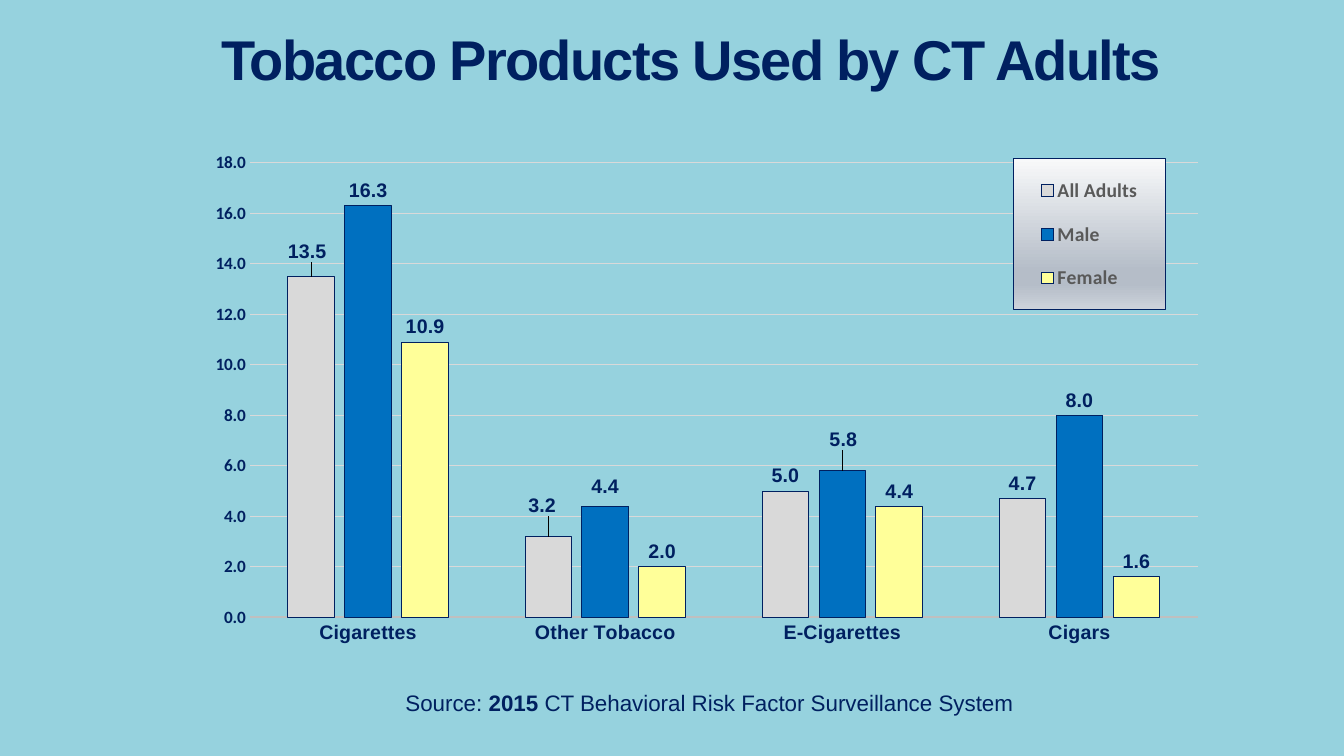
"""Build a slide charting tobacco products used by Connecticut adults."""
from pptx import Presentation
from pptx.chart.data import CategoryChartData
from pptx.dml.color import RGBColor
from pptx.enum.chart import XL_CHART_TYPE as ChartType
from pptx.enum.chart import XL_LABEL_POSITION as LabelPosition
from pptx.enum.chart import XL_LEGEND_POSITION as LegendPosition
from pptx.enum.chart import XL_TICK_MARK as TickMark
from pptx.enum.text import MSO_ANCHOR as Anchor
from pptx.enum.text import MSO_AUTO_SIZE as AutoSize
from pptx.enum.text import PP_ALIGN as Align
from pptx.oxml import parse_xml
from pptx.oxml.ns import nsdecls, qn
from pptx.util import Cm, Pt

SKY = RGBColor(0x96, 0xD2, 0xDE)
NAVY = RGBColor(0x00, 0x20, 0x60)
BLACK = RGBColor(0x00, 0x00, 0x00)
LIGHT_GRAY = RGBColor(0xD9, 0xD9, 0xD9)
AXIS_GRAY = RGBColor(0xBF, 0xBF, 0xBF)
LEGEND_GRAY = RGBColor(0x59, 0x59, 0x59)
BLUE = RGBColor(0x00, 0x70, 0xC0)
YELLOW = RGBColor(0xFF, 0xFF, 0x99)


def style_font(font, size, color=NAVY, bold=True, name="Arial"):
    font.name, font.size, font.bold = name, Pt(size), bold
    font.color.rgb = color


def place(element, index, body):
    for old in element.findall(qn("c:layout")):
        element.remove(old)
    element.insert(index, parse_xml(
        f"<c:layout {nsdecls('c')}><c:manualLayout>{body}</c:manualLayout></c:layout>"))


presentation = Presentation()
presentation.slide_width, presentation.slide_height = Cm(33.87), Cm(19.05)
slide = presentation.slides.add_slide(presentation.slide_layouts[6])
slide.background.fill.solid()
slide.background.fill.fore_color.rgb = SKY

title = slide.shapes.add_textbox(Cm(4.65), Cm(0.58), Cm(25.55), Cm(2.01)).text_frame
title.word_wrap = True
title.vertical_anchor = Anchor.MIDDLE
title.text = "Tobacco Products Used by CT Adults"
heading = title.paragraphs[0]
heading.alignment, heading.line_spacing = Align.CENTER, 0.85
style_font(heading.runs[0].font, 40)
heading.runs[0].font._element.set("spc", "-120")

usage = CategoryChartData(number_format="0.0")
usage.categories = ["Cigarettes", "Other Tobacco", "E-Cigarettes", "Cigars"]
usage.add_series("All Adults", (13.5, 3.2, 5.0, 4.7))
usage.add_series("Male", (16.3, 4.4, 5.8, 8.0))
usage.add_series("Female", (10.9, 2.0, 4.4, 1.6))
chart = slide.shapes.add_chart(ChartType.COLUMN_CLUSTERED, Cm(5.03), Cm(3.1),
                               Cm(25.73), Cm(13.92), usage).chart
chart.has_title = False
style_font(chart.font, 10, BLACK, False, "Calibri")
plot = chart.plots[0]
plot.gap_width, plot.overlap, plot.vary_by_categories = 164, -22, False
place(chart._chartSpace.chart.plotArea, 0,
      '<c:layoutTarget val="inner"/><c:xMode val="edge"/><c:yMode val="edge"/>'
      '<c:x val="0.049"/><c:y val="0.072"/><c:w val="0.929"/><c:h val="0.823"/>')

products = chart.category_axis
products.major_tick_mark = products.minor_tick_mark = TickMark.NONE
products.format.line.color.rgb = AXIS_GRAY
products.format.line.width = Pt(1.5)
style_font(products.tick_labels.font, 14)

percent = chart.value_axis
percent.minimum_scale, percent.maximum_scale, percent.major_unit = 0, 18, 2
percent.major_tick_mark = percent.minor_tick_mark = TickMark.NONE
percent.format.line.fill.background()
percent.major_gridlines.format.line.color.rgb = LIGHT_GRAY
percent.major_gridlines.format.line.width = Pt(0.75)
percent.tick_labels.number_format = "0.0"
percent.tick_labels.number_format_is_linked = False
style_font(percent.tick_labels.font, 12.3, name="Calibri")

label_shifts = {
    "All Adults": {0: (-0.004, -0.018), 1: (-0.006, -0.029)},
    "Male": {1: (0, -0.009), 2: (0.001, -0.029)},
}
for group, color in zip(plot.series, (LIGHT_GRAY, BLUE, YELLOW)):
    group.format.fill.solid()
    group.format.fill.fore_color.rgb = color
    group.format.line.color.rgb = NAVY
    group.format.line.width = Pt(0.75)
    labels = group.data_labels
    labels.show_value = True
    labels.position = LabelPosition.OUTSIDE_END
    labels.number_format, labels.number_format_is_linked = "0.0", False
    style_font(labels.font, 14)
    for index, (dx, dy) in label_shifts.get(group.name, {}).items():
        label = group.points[index].data_label
        style_font(label.font, 14)
        label.position = LabelPosition.OUTSIDE_END
        label_xml = labels._element.find(f"{qn('c:dLbl')}[{qn('c:idx')}][@val]")
        for label_xml in labels._element.findall(qn("c:dLbl")):
            if label_xml.find(qn("c:idx")).get("val") == str(index):
                place(label_xml, 1, f'<c:x val="{dx}"/><c:y val="{dy}"/>')
                label_xml.insert(2, parse_xml(
                    f'<c:numFmt {nsdecls("c")} formatCode="0.0" sourceLinked="0"/>'))

chart.has_legend = True
legend = chart.legend
legend.position, legend.include_in_layout = LegendPosition.TOP, False
style_font(legend.font, 14, LEGEND_GRAY, name="Calibri")
place(legend._element, 1,
      '<c:xMode val="edge"/><c:yMode val="edge"/>'
      '<c:x val="0.797"/><c:y val="0.065"/><c:w val="0.149"/><c:h val="0.273"/>')
stops = "".join(
    f'<a:gs pos="{position}000"><a:srgbClr val="{shade}"/></a:gs>'
    for position, shade in ((0, "F8F9FA"), (74, "B5BDC8"), (83, "B5BDC8"), (100, "CDD3DB")))
legend._element.find(qn("c:txPr")).addprevious(parse_xml(
    f'<c:spPr {nsdecls("c", "a")}><a:gradFill><a:gsLst>{stops}</a:gsLst>'
    f'<a:lin ang="5400000" scaled="0"/></a:gradFill><a:ln w="9525"><a:solidFill>'
    f'<a:srgbClr val="{NAVY}"/></a:solidFill></a:ln></c:spPr>'))

source = slide.shapes.add_textbox(Cm(9.88), Cm(17.25), Cm(16), Cm(0.94)).text_frame
source.word_wrap = False
source.auto_size = AutoSize.SHAPE_TO_FIT_TEXT
citation = source.paragraphs[0]
citation.alignment = Align.CENTER
for words, bold in (("Source: ", False), ("2015", True),
                    (" CT Behavioral Risk Factor Surveillance System", False)):
    run = citation.add_run()
    run.text = words
    style_font(run.font, 16, bold=bold)

presentation.save("out.pptx")
